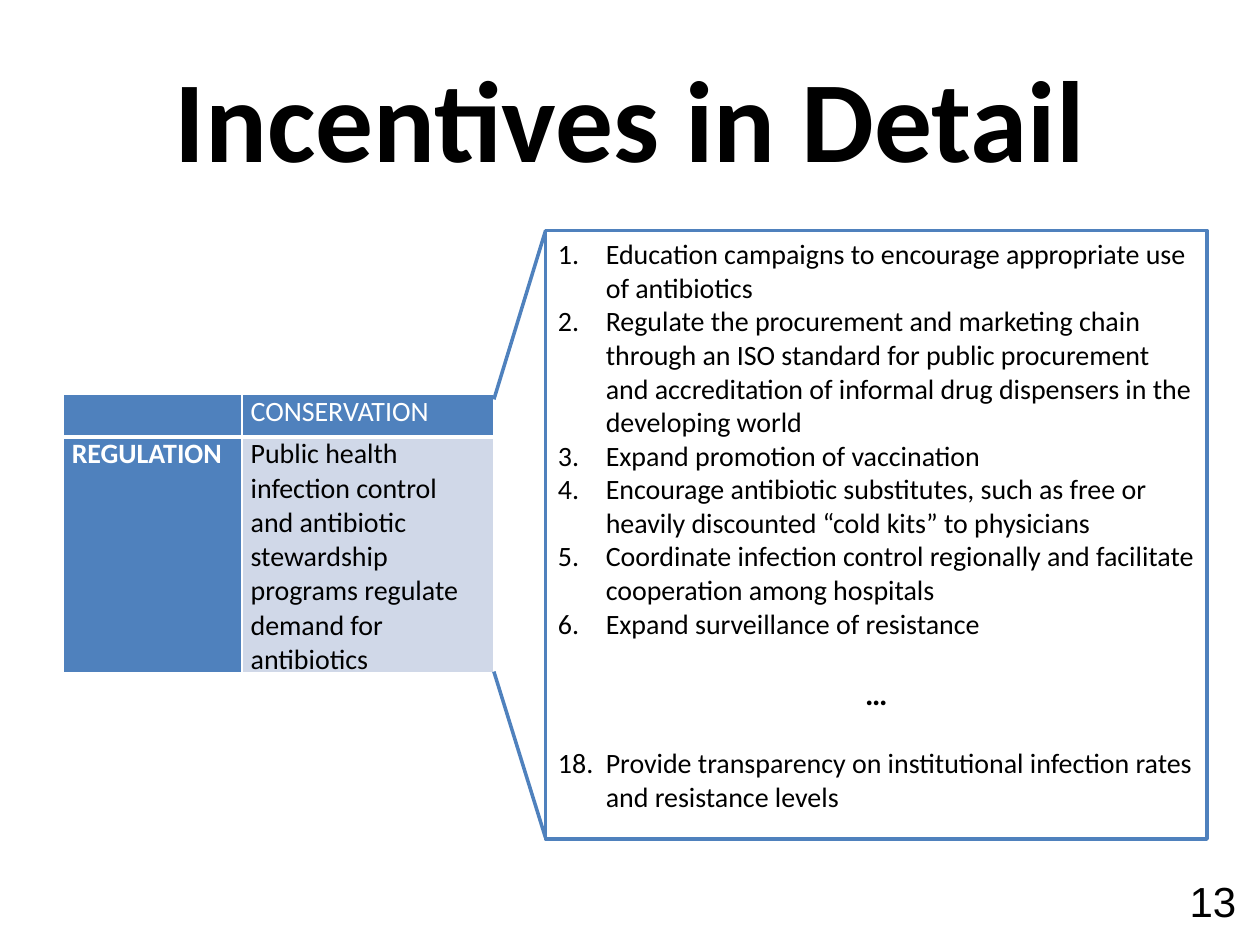
"""Build the slide "Incentives in Detail"."""
from dataclasses import dataclass
from typing import Optional

from lxml.etree import SubElement
from pptx import Presentation
from pptx.dml.color import RGBColor
from pptx.enum.shapes import MSO_CONNECTOR, MSO_SHAPE
from pptx.enum.text import MSO_ANCHOR, PP_ALIGN
from pptx.oxml import parse_xml
from pptx.oxml.ns import nsdecls, qn
from pptx.util import Inches, Pt

BLUE = RGBColor(0x4F, 0x81, 0xBD)
PALE_BLUE = RGBColor(0xD0, 0xD8, 0xE8)
BLACK = RGBColor(0, 0, 0)
WHITE = RGBColor(255, 255, 255)

BODY_SIZE = 16
BLANK_LINE = 19.5


@dataclass(frozen=True)
class Label:
    text: str
    left: float
    top: float
    width: float
    height: float
    size: float
    font: str
    align: PP_ALIGN
    bold: bool = False


@dataclass(frozen=True)
class Cell:
    text: str
    fill: RGBColor
    color: RGBColor = WHITE
    bold: bool = False
    bottom_border: float = 1


@dataclass(frozen=True)
class Callout:
    start: tuple[float, float]
    end: tuple[float, float]


LABELS = [
    Label("13", 7.58, 6.95, 2.33, 0.4, 24, "Arial", PP_ALIGN.RIGHT),
    Label("Incentives in Detail", 0.5, 0.3, 9, 1.25, 66, "Calibri", PP_ALIGN.CENTER, True),
]
COLUMN_WIDTHS = [1.42, 2]
ROW_HEIGHTS = [0.34, 1.87]
CELLS = [
    [Cell("", BLUE, bottom_border=3), Cell("CONSERVATION", BLUE, bottom_border=3)],
    [
        Cell("REGULATION", BLUE, bold=True),
        Cell("Public health infection control and antibiotic stewardship "
             "programs regulate demand for antibiotics", PALE_BLUE, BLACK),
    ],
]
INCENTIVES = [
    "Education campaigns to encourage appropriate use of antibiotics",
    "Regulate the procurement and marketing chain through an ISO standard for public "
    "procurement and accreditation of informal drug dispensers in the developing world",
    "Expand promotion of vaccination",
    "Encourage antibiotic substitutes, such as free or heavily discounted “cold kits” to physicians",
    "Coordinate infection control regionally and facilitate cooperation among hospitals",
    "Expand surveillance of resistance",
]
LAST_INCENTIVE = "Provide transparency on institutional infection rates and resistance levels"
CALLOUTS = [Callout((3.92, 3.17), (4.33, 1.83)), Callout((3.92, 5.33), (4.33, 6.65))]


def add_run(paragraph, text: str, size: float, color: RGBColor = BLACK,
            bold: bool = False, font: str = "Calibri") -> None:
    run = paragraph.add_run()
    run.text = text
    run.font.size = Pt(size)
    run.font.name = font
    run.font.bold = bold
    run.font.color.rgb = color


def add_label(slide, label: Label) -> None:
    box = slide.shapes.add_textbox(
        Inches(label.left), Inches(label.top), Inches(label.width), Inches(label.height))
    frame = box.text_frame
    frame.word_wrap = True
    frame.vertical_anchor = MSO_ANCHOR.MIDDLE
    paragraph = frame.paragraphs[0]
    paragraph.alignment = label.align
    add_run(paragraph, label.text, label.size, bold=label.bold, font=label.font)


def fill_cell(target, cell: Cell, top_border: float) -> None:
    target.margin_left = target.margin_right = Inches(0.07)
    target.margin_top = target.margin_bottom = 0
    properties = target._tc.get_or_add_tcPr()
    borders = {"lnL": 1, "lnR": 1, "lnT": top_border, "lnB": cell.bottom_border}
    for side, width in borders.items():
        properties.append(parse_xml(
            f'<a:{side} {nsdecls("a")} w="{Pt(width)}"><a:solidFill>'
            f'<a:srgbClr val="{WHITE}"/></a:solidFill></a:{side}>'))
    target.fill.solid()
    target.fill.fore_color.rgb = cell.fill
    if cell.text:
        add_run(target.text_frame.paragraphs[0], cell.text, BODY_SIZE, cell.color, cell.bold)


def add_incentive_table(slide) -> None:
    table = slide.shapes.add_table(
        len(ROW_HEIGHTS), len(COLUMN_WIDTHS), Inches(0.5), Inches(3.13),
        Inches(sum(COLUMN_WIDTHS)), Inches(sum(ROW_HEIGHTS))).table
    table.first_row = table.horz_banding = False
    for column, width in zip(table.columns, COLUMN_WIDTHS):
        column.width = Inches(width)
    for row_index, (row, height) in enumerate(zip(table.rows, ROW_HEIGHTS)):
        row.height = Inches(height)
        top_border = CELLS[row_index - 1][0].bottom_border if row_index else 1
        for target, cell in zip(row.cells, CELLS[row_index]):
            fill_cell(target, cell, top_border)


def add_numbered(paragraph, text: str, start: Optional[int] = None) -> None:
    paragraph.alignment = PP_ALIGN.LEFT
    properties = paragraph._p.get_or_add_pPr()
    properties.set("marL", str(Inches(0.38)))
    properties.set("indent", str(Inches(-0.38)))
    numbering = SubElement(properties, qn("a:buAutoNum"), type="arabicPeriod")
    if start:
        numbering.set("startAt", str(start))
    add_run(paragraph, text, BODY_SIZE)


def add_detail_box(slide) -> None:
    box = slide.shapes.add_shape(
        MSO_SHAPE.RECTANGLE, Inches(4.33), Inches(1.83), Inches(5.25), Inches(4.83))
    box.shadow.inherit = False
    box.fill.background()
    box.line.color.rgb = BLUE
    box.line.width = Pt(2)
    frame = box.text_frame
    frame.word_wrap = True
    frame.vertical_anchor = MSO_ANCHOR.TOP
    for index, incentive in enumerate(INCENTIVES):
        paragraph = frame.add_paragraph() if index else frame.paragraphs[0]
        add_numbered(paragraph, incentive)
    ellipsis = frame.add_paragraph()
    ellipsis.alignment = PP_ALIGN.CENTER
    ellipsis.space_before = ellipsis.space_after = Pt(BLANK_LINE)
    add_run(ellipsis, "…", 18, bold=True)
    add_numbered(frame.add_paragraph(), LAST_INCENTIVE, start=18)


def add_callout(slide, callout: Callout) -> None:
    points = [Inches(value) for value in callout.start + callout.end]
    connector = slide.shapes.add_connector(MSO_CONNECTOR.STRAIGHT, *points)
    connector.line.color.rgb = BLUE
    connector.line.width = Pt(2)
    SubElement(connector._element.spPr, qn("a:effectLst"))


def main() -> None:
    presentation = Presentation()
    presentation.slide_width = Inches(10)
    presentation.slide_height = Inches(7.5)
    slide = presentation.slides.add_slide(presentation.slide_layouts[6])
    for label in LABELS:
        add_label(slide, label)
    add_incentive_table(slide)
    add_detail_box(slide)
    for callout in CALLOUTS:
        add_callout(slide, callout)
    presentation.save("out.pptx")


if __name__ == "__main__":
    main()
